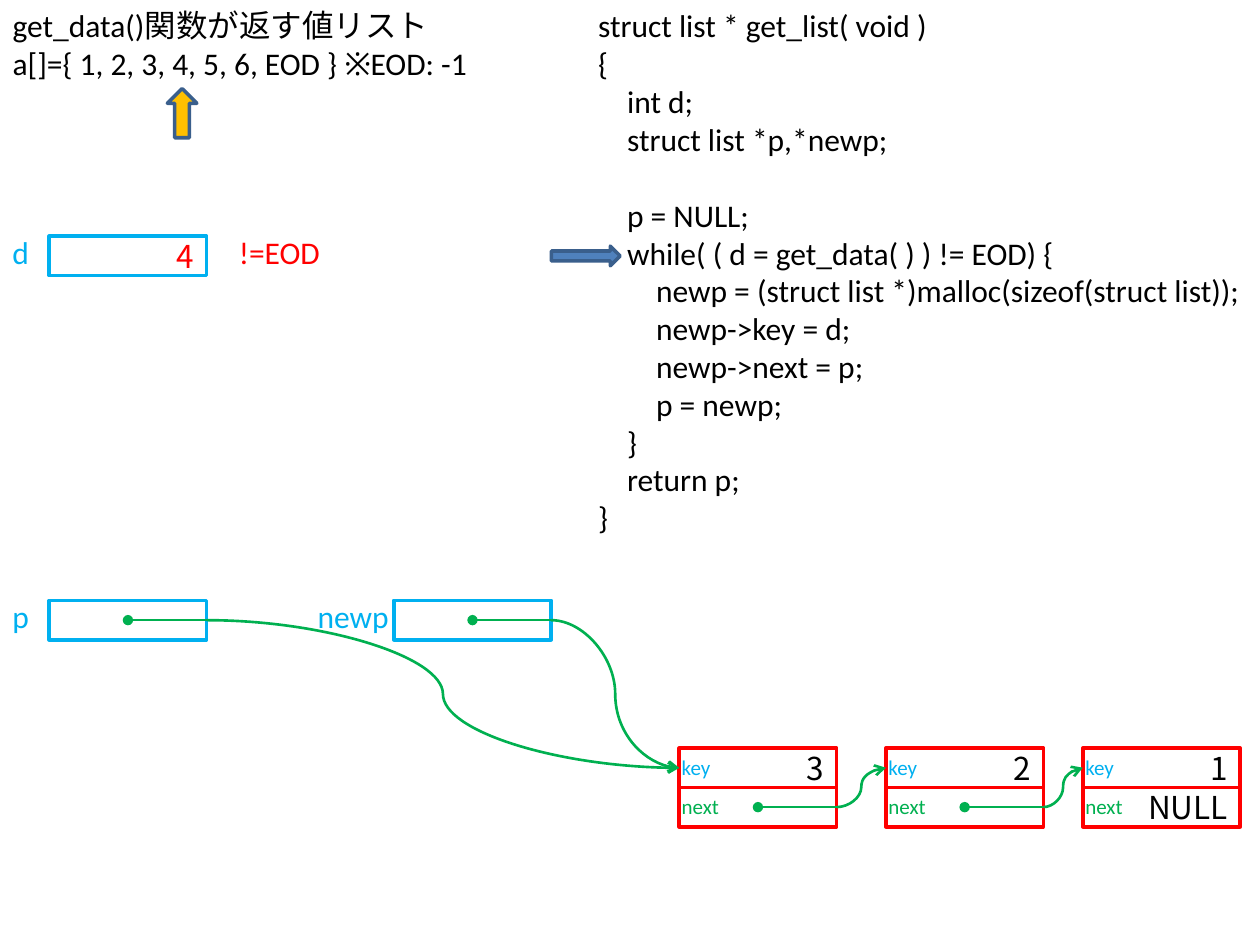
import dataclasses
import typing

import lxml.etree
import pptx
import pptx.dml.color
import pptx.enum.shapes
import pptx.enum.text
import pptx.oxml.ns
import pptx.util

WIDE = pptx.util.Inches(10)
HIGH = pptx.util.Inches(7.5)
UNIT = WIDE / 64
SKY, RED, GREEN, BLACK = "00B0F0", "FF0000", "00B050", "000000"
LATIN, ASIAN = "Calibri", "Noto Sans CJK JP"
SHAPE = pptx.enum.shapes.MSO_SHAPE
LINK = pptx.enum.shapes.MSO_CONNECTOR
ALIGN = pptx.enum.text.PP_ALIGN
ANCHOR = pptx.enum.text.MSO_ANCHOR
FIT = pptx.enum.text.MSO_AUTO_SIZE
TAB = pptx.util.Inches(0.23)


@dataclasses.dataclass
class Area:
    col: float
    row: float
    cols: float
    rows: float

    def emu(self) -> list[int]:
        return [round(n * UNIT) for n in (self.col, self.row, self.cols, self.rows)]


@dataclasses.dataclass
class Line:
    text: str
    depth: int = 0
    gap: int = 0


@dataclasses.dataclass
class Field:
    name: str
    col: float
    row: float
    label: Area
    value: str = ""


@dataclasses.dataclass
class Node:
    col: float
    key: str
    next: str = ""


CODE = [
    Line("struct list * get_list( void )"),
    Line("{"),
    Line("int d;", 1),
    Line("struct list *p,*newp;", 1),
    Line("p = NULL;", 1, 22),
    Line("while( ( d = get_data( ) ) != EOD) {", 1),
    Line("newp = (struct list *)malloc(sizeof(struct list));", 2),
    Line("newp->key = d;", 2),
    Line("newp->next = p;", 2),
    Line("p = newp;", 2),
    Line("}", 1),
    Line("return p;", 1),
    Line("}"),
]
HEAD = [
    Line("get_data()関数が返す値リスト"),
    Line("a[]={ 1, 2, 3, 4, 5, 6, EOD } ※EOD: -1"),
]
FIELDS = [
    Field("p", 2.5, 30.5, Area(0, 30, 3, 2.5)),
    Field("d", 2.5, 12, Area(0, 11.5, 3, 2.5), "4"),
    Field("newp", 20, 30.5, Area(15.5, 30, 5, 2.5)),
]
NODES = [Node(34.5, "3"), Node(45, "2"), Node(55, "1", "NULL")]


def tint(code: str) -> pptx.dml.color.RGBColor:
    return pptx.dml.color.RGBColor.from_string(code)


def apply(item: typing.Any, form: dict[str, typing.Any]) -> None:
    for name, val in form.items():
        setattr(item, name, val)


def write(shape, lines: list[Line], color: str, size: int = 18,
          font: str = LATIN, align=ALIGN.LEFT) -> None:
    frame = shape.text_frame
    for i, line in enumerate(lines):
        par = frame.paragraphs[0] if i == 0 else frame.add_paragraph()
        apply(par, {"alignment": align, "space_before": pptx.util.Pt(line.gap)})
        if line.depth:
            par._p.get_or_add_pPr().set("marL", str(line.depth * TAB))
        run = par.add_run()
        run.text = line.text
        apply(run.font, {"size": pptx.util.Pt(size), "name": font})
        run.font.color.rgb = tint(color)
        asian = lxml.etree.SubElement(run._r.get_or_add_rPr(), pptx.oxml.ns.qn("a:ea"))
        asian.set("typeface", ASIAN)


def label(slide, area: Area, lines: list[Line], color: str,
          size: int = 18, wrap: bool = True) -> None:
    box = slide.shapes.add_textbox(*area.emu())
    box.text_frame.word_wrap = wrap
    write(box, lines, color, size)


def block(slide, kind, area: Area, edge: str, fill: str = ""):
    shape = slide.shapes.add_shape(kind, *area.emu())
    shape.shadow.inherit = False
    apply(shape.line, {"width": pptx.util.Pt(2)})
    shape.line.color.rgb = tint(edge)
    if fill:
        shape.fill.solid()
        shape.fill.fore_color.rgb = tint(fill)
    else:
        shape.fill.background()
    return shape


def cell(slide, col: float, row: float, edge: str, value: str, color: str):
    shape = block(slide, SHAPE.RECTANGLE, Area(col, row, 8, 2), edge)
    shape.text_frame.vertical_anchor = ANCHOR.MIDDLE
    if value:
        write(shape, [Line(value)], color, font=ASIAN, align=ALIGN.RIGHT)
    return shape


def wire(slide, kind, end: str, mark: str):
    link = slide.shapes.add_connector(kind, 0, 0, 0, 0)
    link.line.width = pptx.util.Pt(1.5)
    link.line.color.rgb = tint(GREEN)
    edge = link.line._get_or_add_ln()
    lxml.etree.SubElement(edge, pptx.oxml.ns.qn(f"a:{end}")).set("type", mark)
    lxml.etree.SubElement(link._element.spPr, pptx.oxml.ns.qn("a:effectLst"))
    return link


def point(slide, source, target) -> None:
    stem = wire(slide, LINK.STRAIGHT, "headEnd", "oval")
    mid = source.top + source.height // 2
    apply(stem, {"begin_x": source.left + source.width // 2, "begin_y": mid,
                 "end_x": source.left + source.width, "end_y": mid})
    stem.end_connect(source, 3)
    curve = wire(slide, LINK.CURVE, "tailEnd", "arrow")
    curve.begin_connect(source, 3)
    curve.end_connect(target, 1)


def title(slide) -> None:
    head = slide.shapes.title
    left, top, width, height = Area(0, 0, 25.5, 4.5).emu()
    apply(head, {"left": left, "top": top, "width": width, "height": height})
    apply(head.text_frame, {"word_wrap": False, "auto_size": FIT.NONE,
                            "vertical_anchor": ANCHOR.TOP})
    write(head, HEAD, BLACK)


def main() -> None:
    deck = pptx.Presentation()
    apply(deck, {"slide_width": WIDE, "slide_height": HIGH})
    slide = deck.slides.add_slide(deck.slide_layouts[5])
    title(slide)
    label(slide, Area(29.75, 0, 34.25, 27.75), CODE, BLACK, wrap=False)
    label(slide, Area(11.5, 11.5, 5.5, 2.5), [Line("!=EOD")], RED, wrap=False)
    block(slide, SHAPE.RIGHT_ARROW, Area(28, 12.5, 3.5, 1), "3A5F8C", "4F81BD")
    block(slide, SHAPE.UP_ARROW, Area(8.5, 4.5, 1.5, 2.5), "3A5F8C", "FFC000")

    boxes = {}
    for field in FIELDS:
        boxes[field.name] = cell(slide, field.col, field.row, SKY, field.value, RED)
        label(slide, field.label, [Line(field.name)], SKY)

    keys, nexts = [], []
    for node in NODES:
        nexts.append(cell(slide, node.col, 40, RED, node.next, BLACK))
        keys.append(cell(slide, node.col, 38, RED, node.key, BLACK))
        for row, name, color in ((38, "key", SKY), (40, "next", GREEN)):
            label(slide, Area(node.col - 0.5, row, 4, 2), [Line(name)], color, 12)

    for name in ("newp", "p"):
        point(slide, boxes[name], keys[0])
    for source, target in zip(nexts, keys[1:]):
        point(slide, source, target)
    deck.save("out.pptx")


if __name__ == "__main__":
    main()
